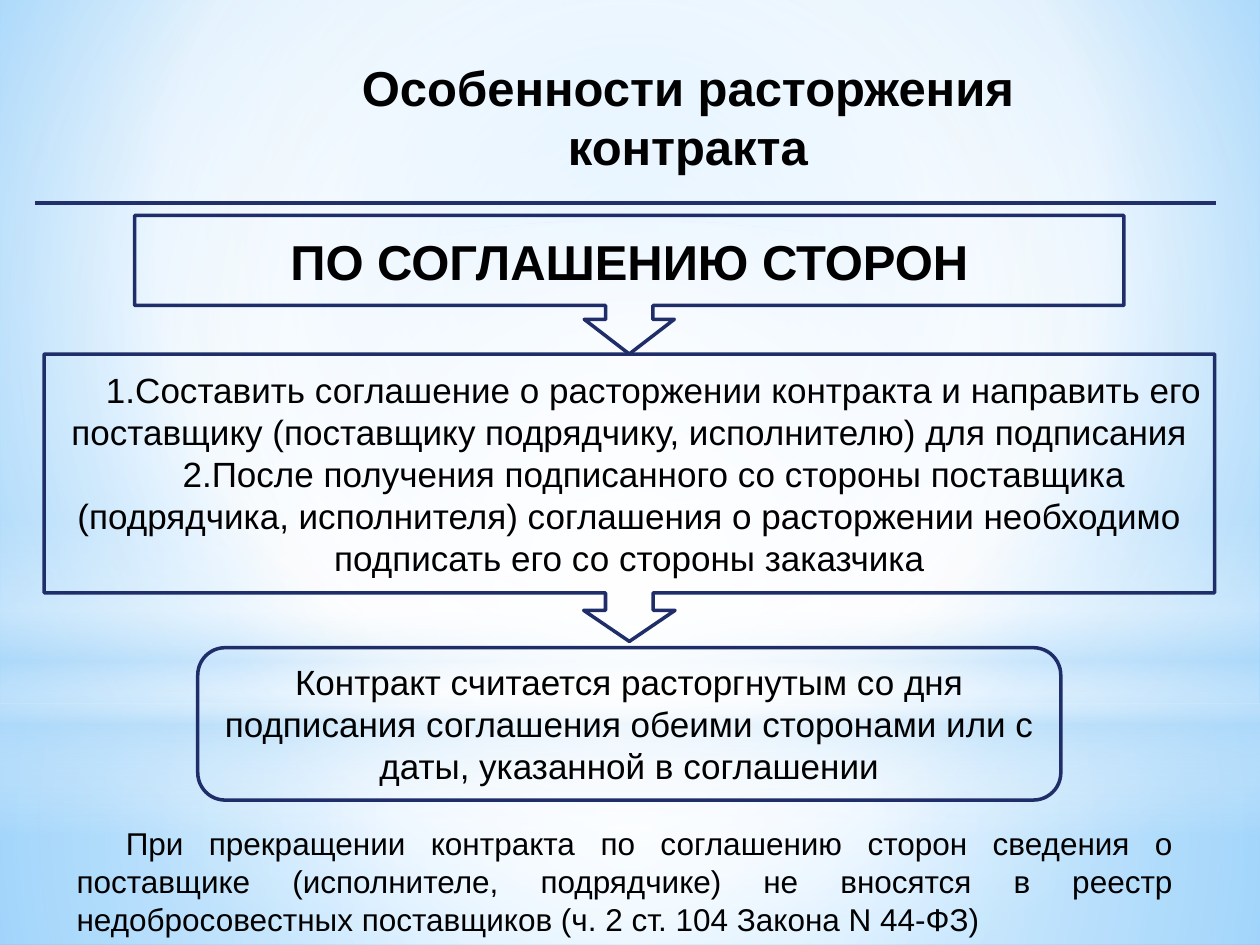
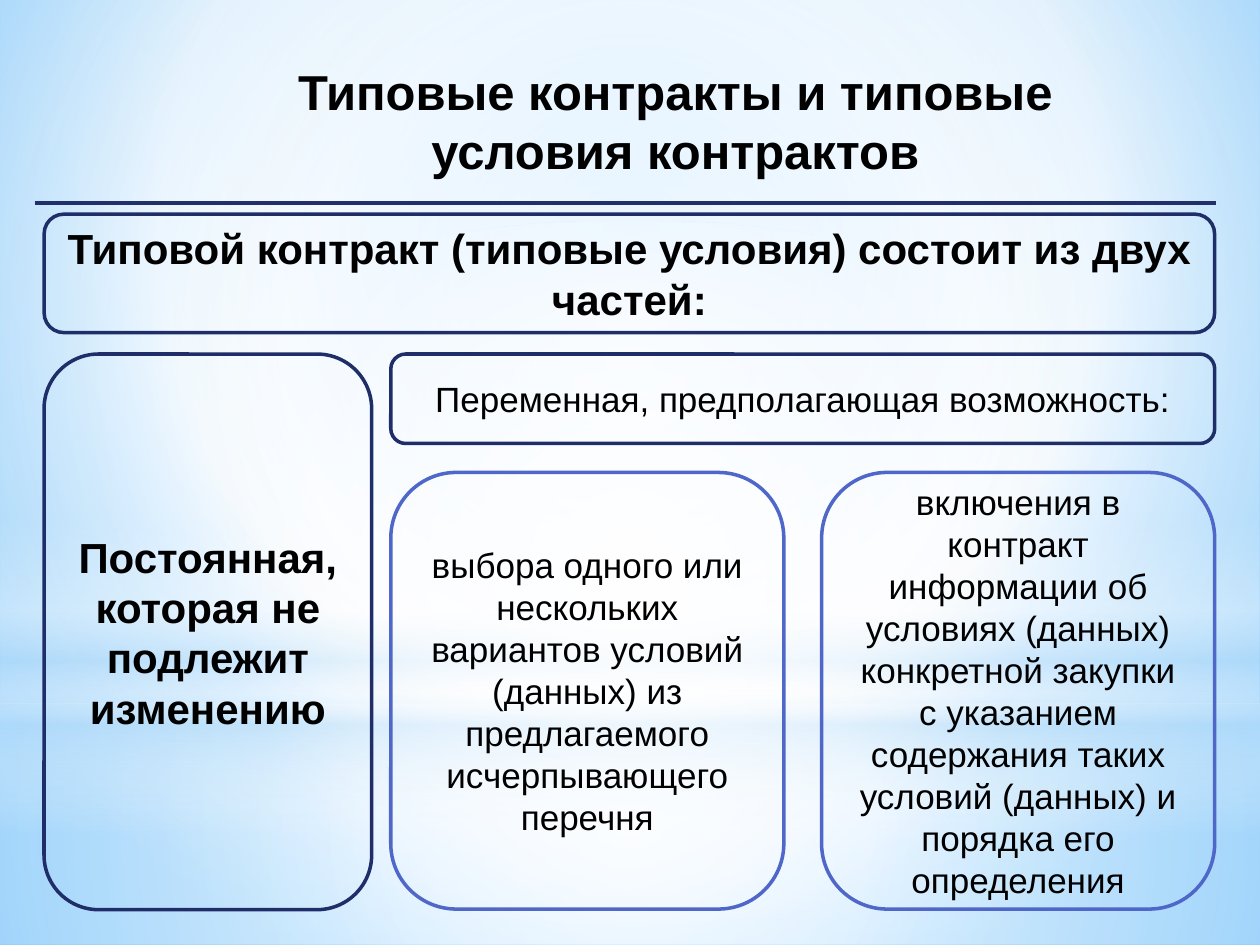
from lxml import etree
from pptx import Presentation
from pptx.dml.color import RGBColor as RGB
from pptx.enum.shapes import MSO_CONNECTOR as LINE, MSO_SHAPE as SHAPE
from pptx.enum.text import MSO_ANCHOR as ANCHOR, MSO_AUTO_SIZE as AUTO, PP_ALIGN as ALIGN
from pptx.oxml import parse_xml
from pptx.oxml.ns import nsdecls, qn
from pptx.util import Pt


class Theme:
    font = "Arial"
    text = RGB.from_string("000000")
    rule = RGB.from_string("21306A")
    navy = RGB.from_string("1F2E69")
    blue = RGB.from_string("4E67C8")
    white, pale, sky, deep = "FFFFFF", "B4DCFA", "9ED5FF", "5BB9FF"
    title, head, body, note = 28, 24, 20, 18
    line = Pt(2)


def set_gradient(owner, element, stops, focus=None):
    owner.fill.gradient()
    old = element.find(".//" + qn("a:gradFill"))
    gs = "".join(
        f'<a:gs pos="{pos * 1000}"><a:srgbClr val="{color}">'
        f'<a:alpha val="{alpha * 1000}"/></a:srgbClr></a:gs>'
        for pos, color, alpha in stops)
    if focus:
        sides = " ".join(f'{k}="{v * 1000}"' for k, v in zip("ltrb", focus))
        way = f'<a:path path="circle"><a:fillToRect {sides}/></a:path>'
    else:
        way = '<a:lin ang="5400000" scaled="0"/>'
    new = parse_xml(f'<a:gradFill {nsdecls("a")} rotWithShape="1">'
                    f'<a:gsLst>{gs}</a:gsLst>{way}</a:gradFill>')
    old.getparent().replace(old, new)


def write(s, texts, size, bold=False, align=ALIGN.CENTER, indent=0, numbered=False):
    tf = s.text_frame
    tf.word_wrap = True
    for i, text in enumerate(texts):
        p = tf.paragraphs[0] if i == 0 else tf.add_paragraph()
        p.alignment = align
        if indent:
            pPr = p._p.get_or_add_pPr()
            pPr.set("marL", "0")
            pPr.set("indent", str(Pt(indent)))
            if numbered:
                etree.SubElement(pPr, qn("a:buFont"), typeface=Theme.font)
                etree.SubElement(pPr, qn("a:buAutoNum"), type="arabicPeriod")
        r = p.add_run()
        r.text = text
        r.font.name = Theme.font
        r.font.size = Pt(size)
        r.font.bold = bold
        r.font.color.rgb = Theme.text


prs = Presentation()
prs.slide_width, prs.slide_height = Pt(720), Pt(540)
master = prs.slide_master
slides = [prs.slides.add_slide(prs.slide_layouts[6]) for _ in range(2)]

set_gradient(master.background, master.element,
             [(0, Theme.sky, 100), (60, Theme.white, 100), (100, Theme.deep, 100)],
             (20, 10, 20, 60))

center = (50, 50, 50, 50)
backdrop = [
    (SHAPE.RECTANGLE, 401.8, 138.2, center,
     [(0, Theme.white, 91), (37, Theme.white, 76), (100, Theme.pale, 79)]),
    (SHAPE.RECTANGLE, 0, 401.8, center,
     [(0, Theme.white, 89), (48, Theme.white, 62), (100, Theme.pale, 79)]),
    (SHAPE.RECTANGLE, 296.6, 180, None,
     [(0, Theme.white, 0), (29, Theme.white, 30), (45, Theme.pale, 40),
      (55, Theme.white, 26), (65, Theme.pale, 60), (100, Theme.white, 0)]),
    (SHAPE.OVAL, 126, 401.8, center,
     [(0, Theme.white, 100), (56, Theme.white, 0)]),
]
for kind, top, height, focus, stops in backdrop:
    s = slides[0].shapes.add_shape(kind, 0, Pt(top), prs.slide_width, Pt(height))
    s.shadow.inherit = False
    s.line.fill.background()
    set_gradient(s, s.element, stops, focus)
    master.shapes.element.append(s.element)

titles = [
    (133.2, 29.5, "Особенности расторжения контракта"),
    (126, 31.7, "Типовые контракты и типовые условия контрактов"),
]
for slide, (left, top, title) in zip(slides, titles):
    s = slide.shapes.add_textbox(Pt(left), Pt(top), Pt(519.8), Pt(74.9))
    write(s, [title], Theme.title, bold=True)
    s.text_frame.auto_size = AUTO.SHAPE_TO_FIT_TEXT
    s = slide.shapes.add_connector(LINE.STRAIGHT, Pt(20.2), Pt(116), Pt(694.8), Pt(116))
    s.line.color.rgb = Theme.rule
    s.line.width = Theme.line
    etree.SubElement(s.element.spPr, qn("a:effectLst"))

callout, rounded = SHAPE.DOWN_ARROW_CALLOUT, SHAPE.ROUNDED_RECTANGLE
edge, full, column, gap = 25.2, 668.9, 224.6, 21.6
right = edge + full - 2 * column - gap
indent = 28.1

steps = [
    (callout, (77, 123.1, 565.2, 79.2), [0.34, 0.325, 0.25, 0.65], Theme.navy,
     ["ПО СОГЛАШЕНИЮ СТОРОН"], dict(size=Theme.title, bold=True)),
    (callout, (edge, 202.3, full, 164.2), [0.166, 0.159, 0.108, 0.831], Theme.navy,
     ["Составить соглашение о расторжении контракта и направить его поставщику "
      "(поставщику подрядчику, исполнителю) для подписания",
      "После получения подписанного со стороны поставщика (подрядчика, исполнителя) "
      "соглашения о расторжении необходимо подписать его со стороны заказчика"],
     dict(size=Theme.body, indent=indent, numbered=True)),
    (rounded, (113, 370.1, 493.2, 87.1), [0.18], Theme.navy,
     ["Контракт считается расторгнутым со дня подписания соглашения обеими "
      "сторонами или с даты, указанной в соглашении"], dict(size=Theme.body)),
]
parts = [
    (rounded, (edge, 122.4, full, 67.7), [], Theme.navy,
     ["Типовой контракт (типовые условия) состоит из двух частей:"],
     dict(size=Theme.head, bold=True)),
    (rounded, (edge, 202.3, 187.2, 317.5), [], Theme.navy,
     ["Постоянная, которая не подлежит изменению"],
     dict(size=Theme.head, bold=True)),
    (rounded, (right, 202.3, 2 * column + gap, 51.1), [], Theme.navy,
     ["Переменная, предполагающая возможность:"], dict(size=Theme.body)),
]
options = [
    "выбора одного или нескольких вариантов условий (данных) из предлагаемого "
    "исчерпывающего перечня",
    "включения в контракт информации об условиях (данных) конкретной закупки с "
    "указанием содержания таких условий (данных) и порядка его определения",
]
for i, option in enumerate(options):
    parts.append((rounded, (right + i * (column + gap), 270, column, 249.5), [],
                  Theme.blue, [option], dict(size=Theme.body)))

for slide, boxes in zip(slides, (steps, parts)):
    for kind, place, adjustments, color, texts, style in boxes:
        s = slide.shapes.add_shape(kind, *map(Pt, place))
        s.shadow.inherit = False
        s.fill.background()
        s.line.color.rgb = color
        s.line.width = Theme.line
        for i, value in enumerate(adjustments):
            s.adjustments[i] = value
        s.text_frame.vertical_anchor = ANCHOR.MIDDLE
        write(s, texts, **style)

s = slides[0].shapes.add_textbox(Pt(36.7), Pt(467.3), Pt(640.8), Pt(72.7))
write(s, ["При прекращении контракта по соглашению сторон сведения о поставщике "
          "(исполнителе, подрядчике) не вносятся в реестр недобросовестных "
          "поставщиков (ч. 2 ст. 104 Закона N 44-ФЗ)"],
      Theme.note, align=ALIGN.JUSTIFY, indent=indent)
s.text_frame.auto_size = AUTO.SHAPE_TO_FIT_TEXT

prs.save("out.pptx")
